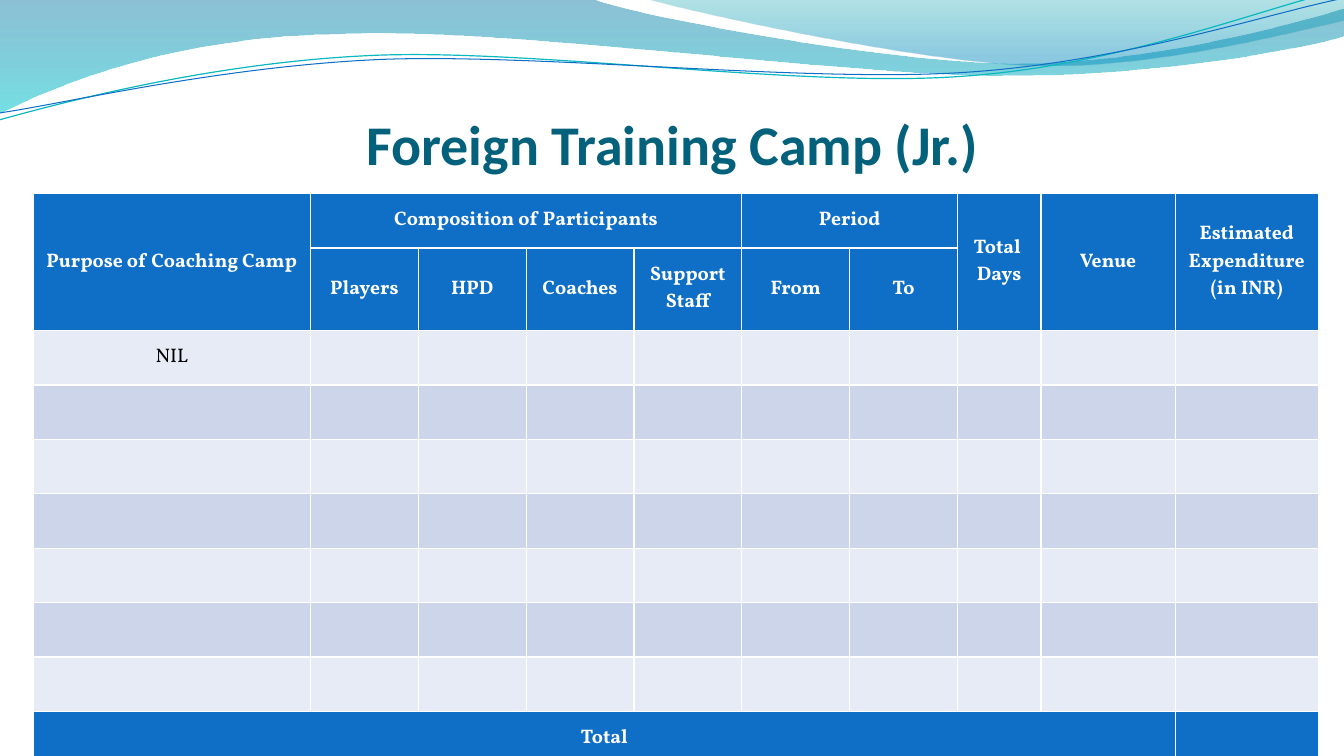
from copy import deepcopy

from lxml.etree import SubElement
from pptx import Presentation
from pptx.dml.color import RGBColor
from pptx.enum.text import MSO_ANCHOR as Anchor, PP_ALIGN as Align
from pptx.oxml.ns import qn
from pptx.util import Cm, Pt

WHITE = RGBColor(0xFF, 0xFF, 0xFF)
BLACK = RGBColor(0x00, 0x00, 0x00)
BLUE = RGBColor(0x0F, 0x6F, 0xC6)
TURQUOISE = RGBColor(0x0A, 0xB8, 0xBF)
TITLE_TEAL = RGBColor(0x04, 0x61, 0x7B)
BAND_LIGHT = RGBColor(0xE7, 0xEB, 0xF5)
BAND_DARK = RGBColor(0xCC, 0xD5, 0xEA)
WAVE_BLUE = RGBColor(0x00, 0x74, 0xA1)
WAVE_AQUA = RGBColor(0x00, 0xC6, 0xCF)
CREST_GREEN = RGBColor(0x00, 0xA1, 0xA9)
CREST_BLUE = RGBColor(0x00, 0x8B, 0xBF)

COLUMN_WIDTHS = [2.75] + [1.07] * 6 + [0.83, 1.33, 1.42]
ROW_HEIGHTS = [0.54, 0.82] + [0.54] * 8
WIDE_MARGINS, TIGHT_MARGINS = (0.1, 0.05), (0.01, 0)

BROAD_WAVE = [
    (0, 0), (5.87, -0.01),
    (6.34, 0.17, 8.85, 0.63, 10.11, 0.63),
    (11.38, 0.63, 12.78, 0.26, 13.33, 0.09),
    (13.35, 0.36),
    (13.11, 0.44, 11.6, 0.76, 9.94, 0.75),
    (8.29, 0.75, 5.09, 0.28, 3.43, 0.34),
    (1.72, 0.36, 0.61, 0.83, -0.01, 1.13),
    (0, 0),
]
CREST = [
    (6.39, -0.01),
    (6.79, 0.11, 9.09, 0.62, 10.25, 0.65),
    (11.41, 0.69, 12.82, 0.32, 13.33, 0.21),
    (13.33, 0), (6.39, -0.01),
]
UPPER_STRAND = [
    (-0.01, 1.19),
    (0.64, 1.01, 2.11, 0.62, 3.69, 0.55),
    (5.27, 0.48, 7.9, 0.87, 9.5, 0.76),
    (11.1, 0.66, 12.52, 0.08, 13.31, -0.1),
]
LOWER_STRAND = [
    (0, 1.12),
    (0.63, 1.03, 2.18, 0.66, 3.78, 0.59),
    (5.37, 0.53, 7.96, 0.82, 9.55, 0.72),
    (11.15, 0.62, 12.55, 0.14, 13.34, -0.02),
]

TALL_HEADINGS = [
    (0, "Purpose of Coaching Camp", WIDE_MARGINS),
    (7, "Total \nDays", TIGHT_MARGINS),
    (8, "Venue", TIGHT_MARGINS),
    (9, "Estimated Expenditure\v(in INR)", TIGHT_MARGINS),
]
GROUP_HEADINGS = [(1, 4, "Composition of Participants"), (5, 6, "Period")]
SUB_HEADINGS = ["Players", "HPD", "Coaches", "Support Staff", "From", "To"]


def inch(value):
    """Return a length in inches as centimetres."""
    return Cm(value * 2.54)


def write_text(frame, text, font="Vollkorn", size=14, color=WHITE, bold=True):
    """Fill a text frame with centred paragraphs in one format."""
    frame.text = text
    for paragraph in frame.paragraphs:
        paragraph.alignment = Align.CENTER
        for run in paragraph.runs:
            run.font.name = font
            run.font.size = Pt(size)
            run.font.bold = bold
            run.font.color.rgb = color
        for line_break in paragraph._p.findall(qn("a:br")):
            line_break.insert(0, deepcopy(paragraph.runs[0]._r.rPr))


def bend(outline, segments):
    """Join the control points of each curved segment into one cubic curve."""
    steps = iter(list(outline._element.iter(qn("a:lnTo"))))
    for segment in segments:
        joined = [next(steps) for _ in range(len(segment) // 2)]
        if len(joined) == 1:
            continue
        contour = joined[0].getparent()
        curve = SubElement(contour, qn("a:cubicBezTo"))
        contour.replace(joined[0], curve)
        curve.append(joined[0][0])
        for step in joined[1:]:
            curve.append(step[0])
            contour.remove(step)


def add_outline(slide, segments, close):
    """Add a freeform that follows straight and cubic segments."""
    points = [
        (inch(x), inch(y))
        for segment in segments for x, y in zip(segment[::2], segment[1::2])
    ]
    builder = slide.shapes.build_freeform(*points[0])
    builder.add_line_segments(points[1:], close=close)
    outline = builder.convert_to_shape()
    outline.shadow.inherit = False
    bend(outline, segments[1:])
    return outline


def add_wave(slide, segments, stops):
    """Add a borderless wave with a translucent vertical gradient."""
    wave = add_outline(slide, segments, True)
    wave.line.fill.background()
    wave.fill.gradient()
    wave.fill.gradient_angle = 270
    for stop, (position, color, _) in zip(wave.fill.gradient_stops, stops):
        stop.position = position
        stop.color.rgb = color
    for tone, (_, _, opacity) in zip(wave._element.iter(qn("a:srgbClr")), stops):
        SubElement(tone, qn("a:alpha"), val=str(opacity * 1000))


def add_strand(slide, segments, color, width):
    """Add a thin open curve."""
    strand = add_outline(slide, segments, False)
    strand.fill.background()
    strand.line.color.rgb = color
    strand.line.width = Pt(width)


def add_title(slide, text):
    """Add the bottom-anchored slide title."""
    box = slide.shapes.add_textbox(inch(2.17), inch(0.77), inch(9), inch(0.98))
    frame = box.text_frame
    frame.word_wrap = True
    frame.vertical_anchor = Anchor.BOTTOM
    frame.margin_left = frame.margin_right = frame.margin_bottom = 0
    frame.margin_top = inch(0.05)
    write_text(frame, text, font="Calibri", size=40, color=TITLE_TEAL)


def style_cell(cell, color):
    """Give a cell white borders and a solid fill."""
    properties = cell._tc.get_or_add_tcPr()
    for side in ("lnL", "lnR", "lnT", "lnB"):
        border = SubElement(properties, qn(f"a:{side}"), w=str(Pt(1)))
        paint = SubElement(border, qn("a:solidFill"))
        SubElement(paint, qn("a:srgbClr"), val=str(WHITE))
    cell.fill.solid()
    cell.fill.fore_color.rgb = color


def write_cell(cell, text, margins=WIDE_MARGINS, **text_format):
    """Write centred text into a cell."""
    cell.vertical_anchor = Anchor.MIDDLE
    cell.margin_left = cell.margin_right = inch(margins[0])
    cell.margin_top = cell.margin_bottom = inch(margins[1])
    write_text(cell.text_frame, text, **text_format)


def add_camp_table(slide):
    """Add the table of camps with its headings and total row."""
    camps = slide.shapes.add_table(
        len(ROW_HEIGHTS), len(COLUMN_WIDTHS), inch(0.33), inch(1.92),
        inch(sum(COLUMN_WIDTHS)), inch(sum(ROW_HEIGHTS)),
    ).table
    camps.first_row = camps.horz_banding = False
    for column, width in zip(camps.columns, COLUMN_WIDTHS):
        column.width = inch(width)
    bands = [BLUE] * 2 + [BAND_LIGHT, BAND_DARK] * 3 + [BAND_LIGHT, BLUE]
    for row, height, band in zip(camps.rows, ROW_HEIGHTS, bands):
        row.height = inch(height)
        for cell in row.cells:
            style_cell(cell, band)

    for column, heading, margins in TALL_HEADINGS:
        camps.cell(0, column).merge(camps.cell(1, column))
        write_cell(camps.cell(0, column), heading, margins)
    for first, last, heading in GROUP_HEADINGS:
        camps.cell(0, first).merge(camps.cell(0, last))
        write_cell(camps.cell(0, first), heading)
    for column, heading in enumerate(SUB_HEADINGS, 1):
        write_cell(camps.cell(1, column), heading)
    write_cell(camps.cell(2, 0), "NIL", color=BLACK, bold=False)
    camps.cell(9, 0).merge(camps.cell(9, 8))
    write_cell(camps.cell(9, 0), "Total")


def main():
    """Build and save the slide."""
    deck = Presentation()
    deck.slide_width, deck.slide_height = inch(13.333), inch(7.5)
    slide = deck.slides.add_slide(deck.slide_layouts[6])
    add_wave(slide, BROAD_WAVE, [(0, WAVE_BLUE, 45), (1, WAVE_AQUA, 55)])
    add_wave(slide, CREST, [(0, CREST_GREEN, 30), (0.8, CREST_BLUE, 45)])
    add_strand(slide, UPPER_STRAND, TURQUOISE, 0.85)
    add_strand(slide, LOWER_STRAND, BLUE, 0.75)
    add_title(slide, "Foreign Training Camp (Jr.)")
    add_camp_table(slide)
    deck.save("out.pptx")


if __name__ == "__main__":
    main()
